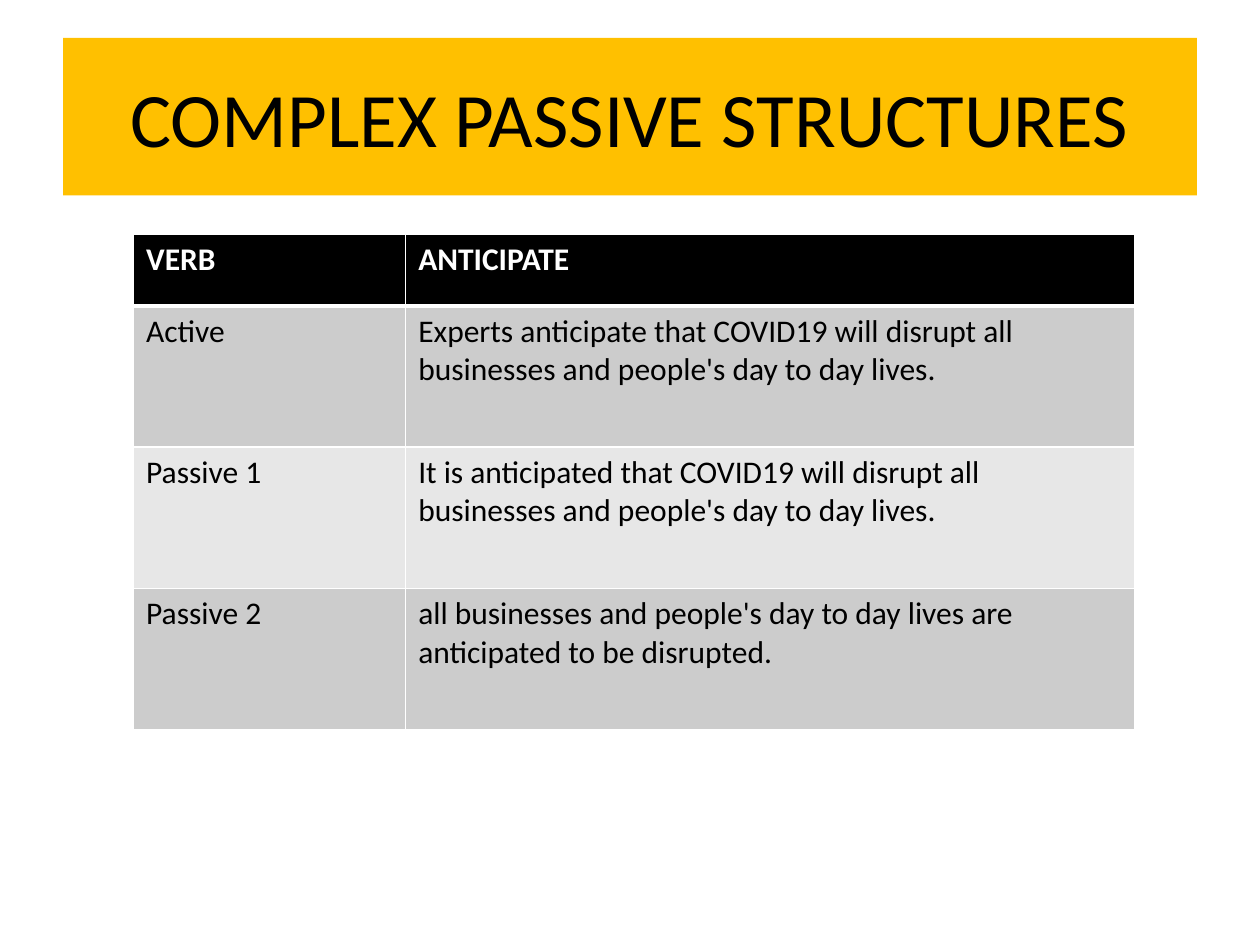
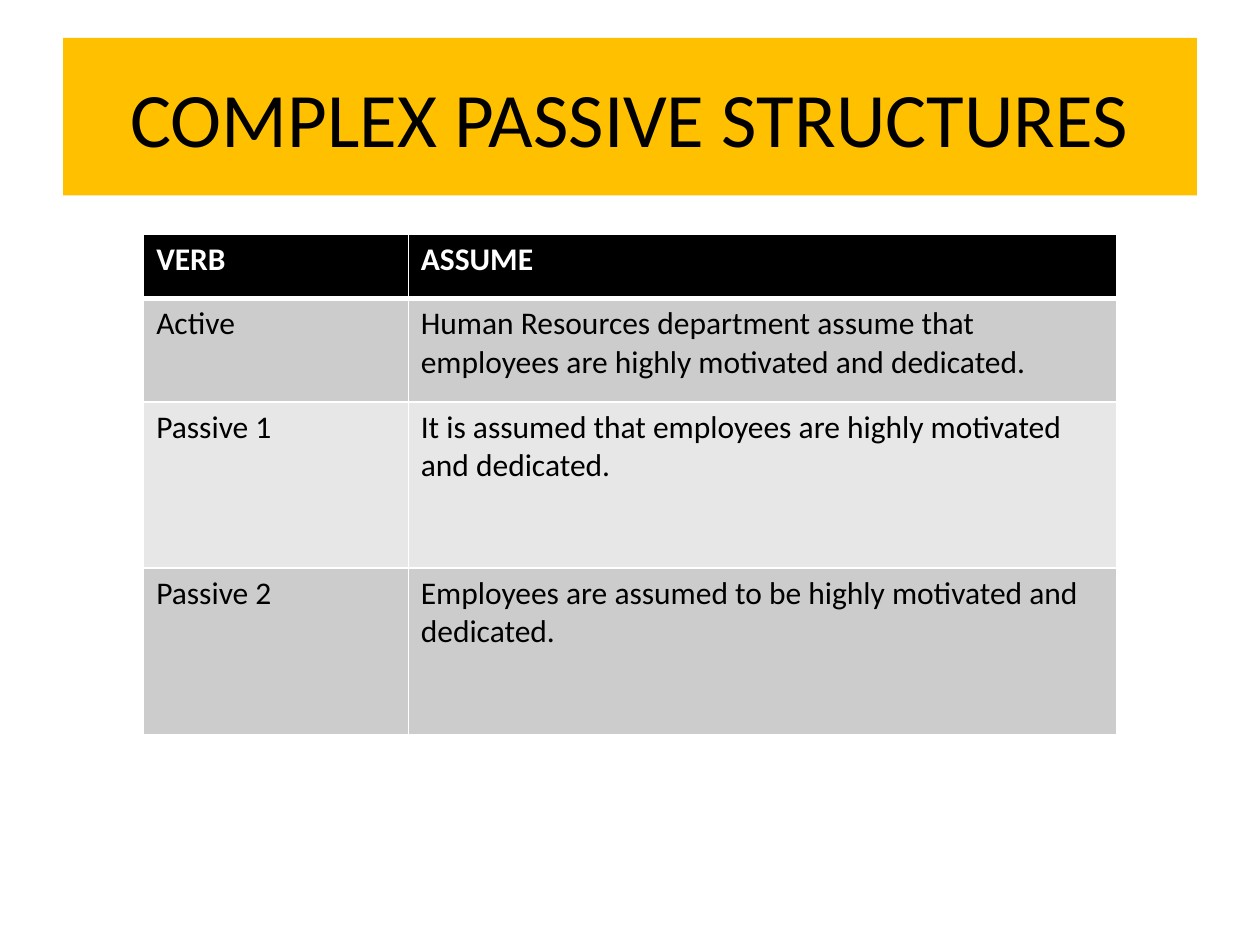
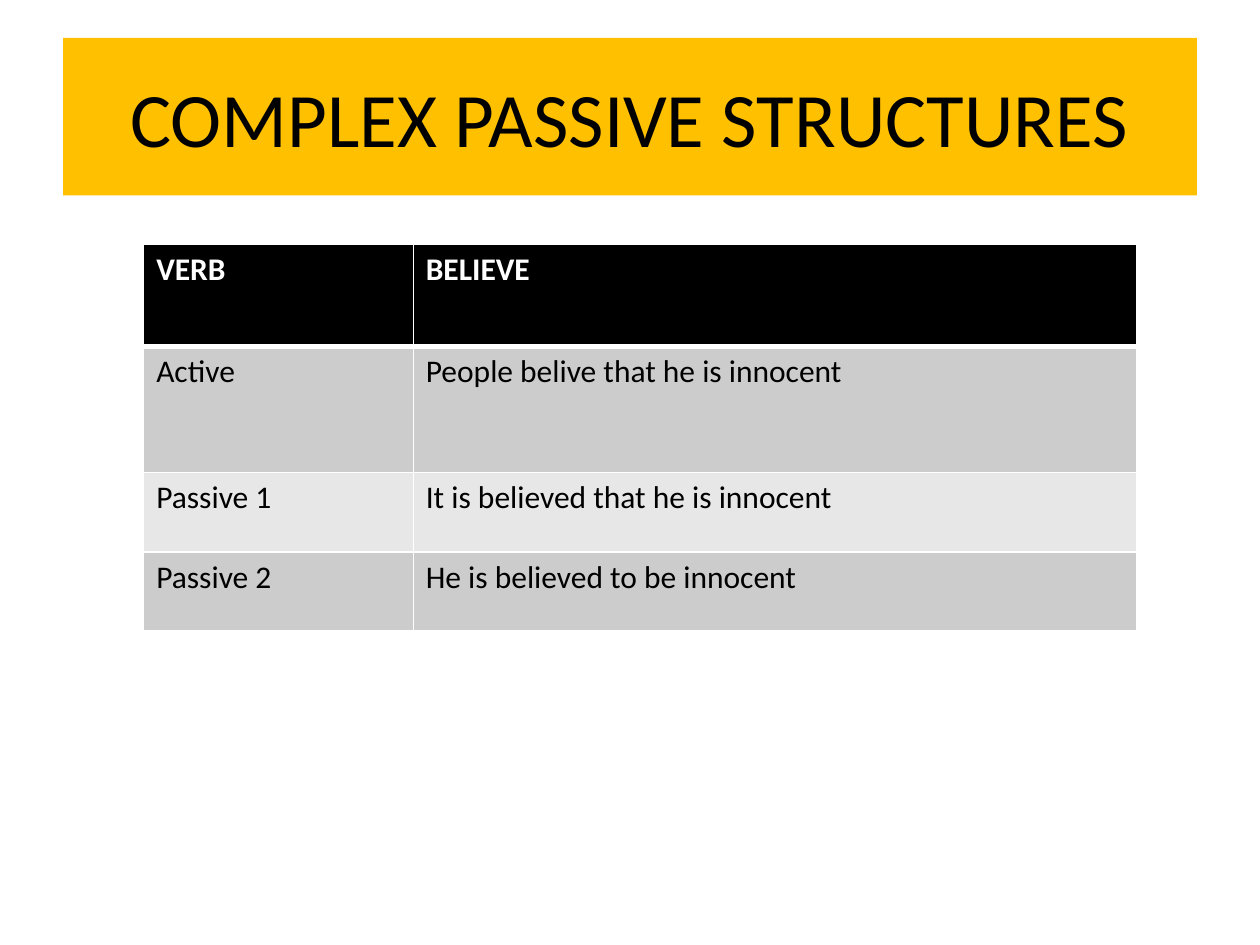
from dataclasses import dataclass

from lxml import etree
from pptx import Presentation
from pptx import util as u
from pptx.dml.color import RGBColor
from pptx.enum import text
from pptx.oxml.ns import qn


@dataclass(frozen=True)
class Theme:
    """Colours, font and type sizes shared by the slides."""
    font: str = "Calibri"
    title_size: int = 44
    table_size: int = 18
    band: str = "FFC000"
    ink: str = "000000"
    paper: str = "FFFFFF"
    dark_row: str = "CCCCCC"
    light_row: str = "E7E7E7"
    thin: int = 1
    thick: int = 3


THEME = Theme()
TITLE = "COMPLEX PASSIVE STRUCTURES"
LABELS = ("VERB", "Active", "Passive 1", "Passive 2")

SLIDES = [
    dict(left=1.06, top=1.86, cols=(2.16, 5.79), rows=(0.57, 1.12, 1.12, 1.12), entries=(
        "ANTICIPATE",
        "Experts anticipate that COVID19 will disrupt all businesses and people's day to day lives.",
        "It is anticipated that COVID19 will disrupt all businesses and people's day to day lives.",
        "all businesses and people's day to day lives are anticipated to be disrupted.")),
    dict(left=1.14, top=1.86, cols=(2.1, 5.62), rows=(0.51, 0.82, 1.32, 1.32), entries=(
        "ASSUME",
        "Human Resources department assume that employees are highly motivated and dedicated.",
        "It is assumed that employees are highly motivated and dedicated.",
        "Employees are assumed to be highly motivated and dedicated.")),
    dict(left=1.14, top=1.94, cols=(2.14, 5.74), rows=(0.81, 1, 0.63, 0.63), entries=(
        "BELIEVE",
        "People belive that he is innocent",
        "It is believed that he is innocent",
        "He is believed to be innocent")),
]


def write_text(tf, words, size, color, bold=False, align=text.PP_ALIGN.LEFT):
    """Write one formatted paragraph into a text frame."""
    p = tf.paragraphs[0]
    p.alignment = align
    r = p.add_run()
    r.text = words
    r.font.name = THEME.font
    r.font.size = u.Pt(size)
    r.font.bold = bold
    r.font.color.rgb = RGBColor.from_string(color)


def paint(fill, color):
    """Give a fill one solid colour."""
    fill.solid()
    fill.fore_color.rgb = RGBColor.from_string(color)


def set_borders(cell, top, bottom):
    """Rule the four sides of a cell, with widths in points."""
    tc_pr = cell._tc.get_or_add_tcPr()
    widths = {"lnL": THEME.thin, "lnR": THEME.thin, "lnT": top, "lnB": bottom}
    for side, width in widths.items():
        ln = etree.SubElement(tc_pr, qn(f"a:{side}"), w=str(u.Pt(width)))
        solid = etree.SubElement(ln, qn("a:solidFill"))
        etree.SubElement(solid, qn("a:srgbClr"), val=THEME.paper)


def add_title(s):
    """Fill and place the title band."""
    sp = s.shapes.title
    sp.left, sp.top, sp.width, sp.height = map(u.Inches, (0.5, 0.3, 9, 1.25))
    paint(sp.fill, THEME.band)
    tf = sp.text_frame
    tf.word_wrap = True
    tf.auto_size = text.MSO_AUTO_SIZE.NONE
    tf.vertical_anchor = text.MSO_ANCHOR.MIDDLE
    write_text(tf, TITLE, THEME.title_size, THEME.ink, align=text.PP_ALIGN.CENTER)


def format_cell(cell, words, row):
    """Fill a cell according to its row."""
    header = row == 0
    set_borders(cell, THEME.thick if row == 1 else THEME.thin,
                THEME.thick if header else THEME.thin)
    band = THEME.dark_row if row % 2 else THEME.light_row
    paint(cell.fill, THEME.ink if header else band)
    write_text(cell.text_frame, words, THEME.table_size,
               THEME.paper if header else THEME.ink, bold=header)


def add_verb_table(s, left, top, cols, rows, entries):
    """Add the table of active and passive sentences for one verb."""
    box = map(u.Inches, (left, top, sum(cols), sum(rows)))
    table = s.shapes.add_table(len(rows), len(cols), *box).table
    for column, width in zip(table.columns, cols):
        column.width = u.Inches(width)
    for i, (height, pair) in enumerate(zip(rows, zip(LABELS, entries))):
        table.rows[i].height = u.Inches(height)
        for j, words in enumerate(pair):
            format_cell(table.cell(i, j), words, i)


def main():
    """Build the slides and save them."""
    prs = Presentation()
    prs.slide_width, prs.slide_height = u.Inches(10), u.Inches(7.5)
    for content in SLIDES:
        s = prs.slides.add_slide(prs.slide_layouts[5])
        add_title(s)
        add_verb_table(s, **content)
    prs.save("out.pptx")


if __name__ == "__main__":
    main()
